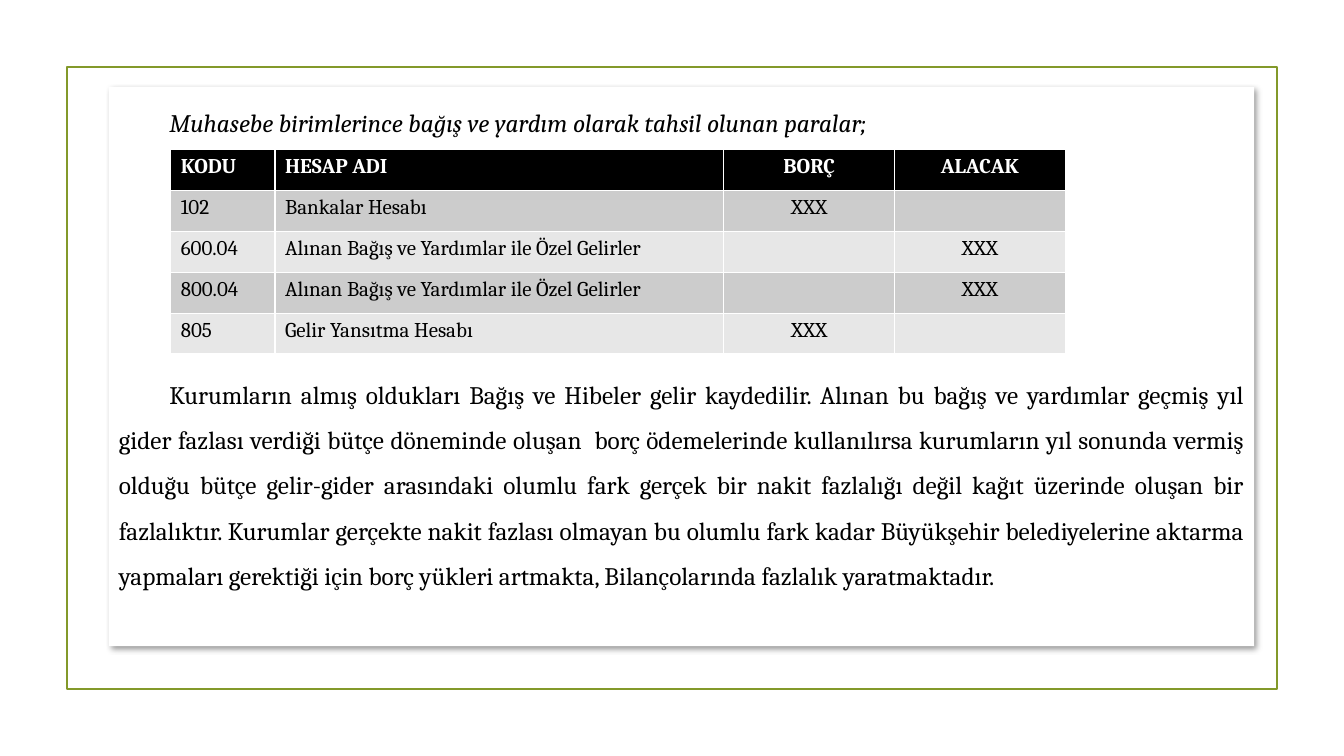
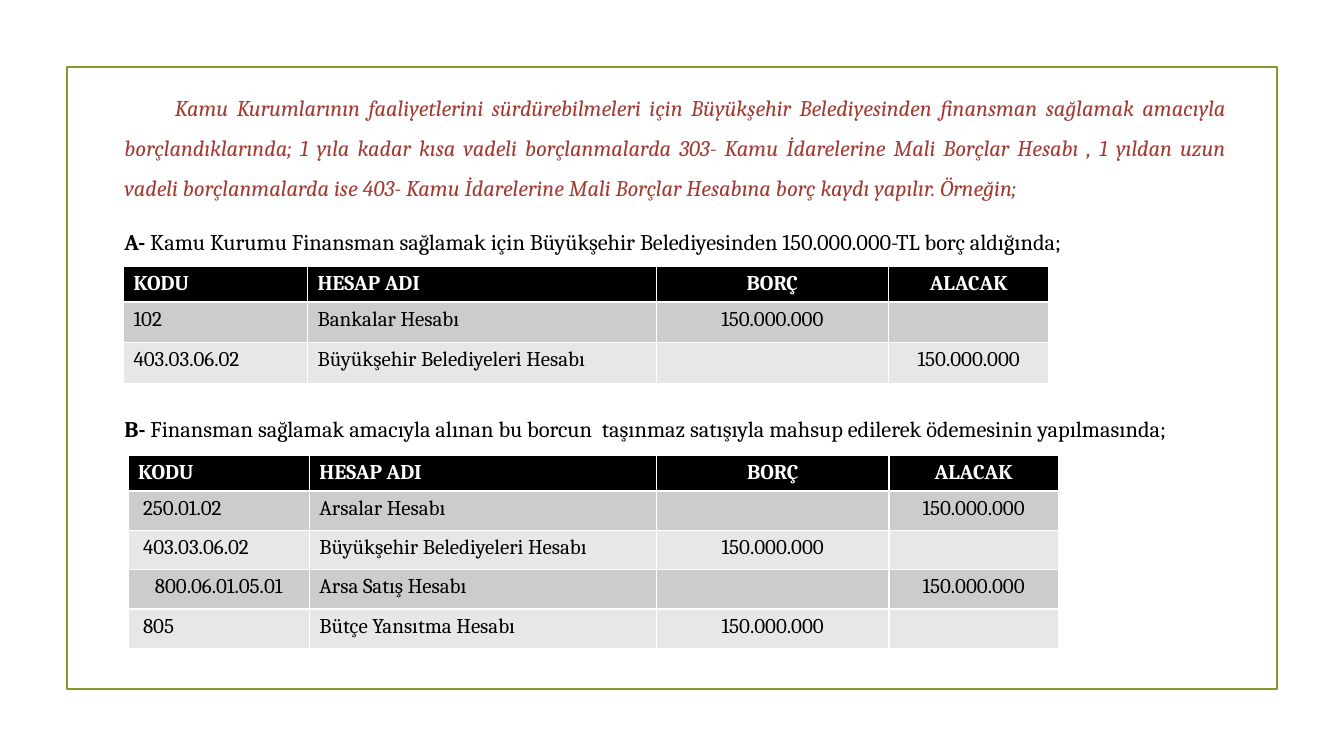
"""Build two slides on the accounting of donations and of borrowing."""
from dataclasses import dataclass

from lxml.etree import SubElement
from pptx import Presentation
from pptx.dml.color import RGBColor
from pptx.enum.shapes import MSO_SHAPE
from pptx.enum.text import MSO_ANCHOR, PP_ALIGN
from pptx.oxml.ns import qn
from pptx.util import Pt


@dataclass(frozen=True)
class Theme:
    font: str = "Cambria"
    ink: str = "000000"
    paper: str = "FFFFFF"
    frame: str = "83992A"
    accent: str = "A23C33"
    bands: tuple = ("CCCCCC", "E7E7E7")
    large: float = 18
    body: float = 16
    cell: float = 15
    first_line: float = 36


THEME = Theme()
SLIDE_SIZE = (960, 540)
FRAME = (48, 48, 864, 444)
HEADER = ("KODU", "HESAP ADI", "BORÇ", "ALACAK")
AMOUNT = "150.000.000"

SLIDES = [
    {
        "panel": (77.8, 62, 818, 399.6),
        "raised": True,
        "size": THEME.large,
        "paragraphs": [
            {"text": "Muhasebe birimlerince bağış ve yardım olarak tahsil olunan paralar;",
             "italic": True, "indent": True, "spacing": 1.5},
            {"text": "Kurumların almış oldukları Bağış ve Hibeler gelir kaydedilir. Alınan bu bağış ve "
                     "yardımlar geçmiş yıl gider fazlası verdiği bütçe döneminde oluşan  borç "
                     "ödemelerinde kullanılırsa kurumların yıl sonunda vermiş olduğu bütçe gelir-gider "
                     "arasındaki olumlu fark gerçek bir nakit fazlalığı değil kağıt üzerinde oluşan bir "
                     "fazlalıktır. Kurumlar gerçekte nakit fazlası olmayan bu olumlu fark kadar "
                     "Büyükşehir belediyelerine aktarma yapmaları gerektiği için borç yükleri artmakta, "
                     "Bilançolarında fazlalık yaratmaktadır.",
             "indent": True, "spacing": 1.5, "before": 162},
        ],
        "tables": [
            {"at": (122, 106.9), "columns": (74.5, 320.5, 122, 122), "header": 29.2, "row": 29.2,
             "rows": [("102", "Bankalar Hesabı", "XXX", ""),
                      ("600.04", "Alınan Bağış ve Yardımlar ile Özel Gelirler", "", "XXX"),
                      ("800.04", "Alınan Bağış ve Yardımlar ile Özel Gelirler", "", "XXX"),
                      ("805", "Gelir Yansıtma Hesabı", "XXX", "")]},
        ],
    },
    {
        "panel": (81.8, 54, 801.4, 424),
        "size": THEME.body,
        "paragraphs": [
            {"text": "Kamu Kurumlarının faaliyetlerini sürdürebilmeleri için Büyükşehir Belediyesinden "
                     "finansman sağlamak amacıyla borçlandıklarında; 1 yıla kadar kısa vadeli "
                     "borçlanmalarda 303- Kamu İdarelerine Mali Borçlar Hesabı , 1 yıldan uzun vadeli "
                     "borçlanmalarda ise 403- Kamu İdarelerine Mali Borçlar Hesabına borç kaydı yapılır. "
                     "Örneğin;",
             "italic": True, "indent": True, "spacing": 1.5, "color": THEME.accent},
            {"label": "A-", "before": 19,
             "text": " Kamu Kurumu Finansman sağlamak için Büyükşehir Belediyesinden "
                     "150.000.000-TL borç aldığında;"},
            {"label": "B-", "before": 114.5,
             "text": " Finansman sağlamak amacıyla alınan bu borcun  taşınmaz satışıyla mahsup "
                     "edilerek ödemesinin yapılmasında;"},
        ],
        "tables": [
            {"at": (88.2, 190.5), "columns": (131.5, 249, 166, 114.5), "header": 24.5, "row": 29.2,
             "rows": [("102", "Bankalar Hesabı", AMOUNT, ""),
                      ("403.03.06.02", "Büyükşehir Belediyeleri Hesabı", "", AMOUNT)]},
            {"at": (91.5, 325.5), "columns": (129.5, 248, 166, 121), "header": 24.5, "row": 28.1,
             "code_indent": 3.5, "centred_codes": ("800.06.01.05.01",),
             "rows": [("250.01.02", "Arsalar Hesabı", "", AMOUNT),
                      ("403.03.06.02", "Büyükşehir Belediyeleri Hesabı", AMOUNT, ""),
                      ("800.06.01.05.01", "Arsa Satış Hesabı", "", AMOUNT),
                      ("805", "Bütçe Yansıtma Hesabı", AMOUNT, "")]},
        ],
    },
]


def rgb(value):
    return RGBColor.from_string(value)


def style_run(run, size, color, bold=False, italic=False):
    run.font.name = THEME.font
    run.font.size = Pt(size)
    run.font.color.rgb = rgb(color)
    run.font.bold = bold
    run.font.italic = italic


def add_rectangle(slide, box):
    shape = slide.shapes.add_shape(MSO_SHAPE.RECTANGLE, *map(Pt, box))
    shape.shadow.inherit = False
    return shape


def add_frame(slide):
    frame = add_rectangle(slide, FRAME)
    frame.fill.background()
    frame.line.color.rgb = rgb(THEME.frame)
    frame.line.width = Pt(1.25)


def add_raised_panel(slide, box):
    panel = add_rectangle(slide, box)
    panel.fill.solid()
    panel.fill.fore_color.rgb = rgb(THEME.paper)
    panel.line.fill.background()
    effects = panel._element.spPr.find(qn("a:effectLst"))
    shadow = SubElement(effects, qn("a:outerShdw"), blurRad=str(Pt(4)), dist=str(Pt(3)),
                        dir="2700000", algn="tl", rotWithShape="0")
    color = SubElement(shadow, qn("a:srgbClr"), val=THEME.ink)
    SubElement(color, qn("a:alpha"), val="40000")
    return panel


def fill_text(shape, paragraphs, size):
    frame = shape.text_frame
    frame.word_wrap = True
    frame.vertical_anchor = MSO_ANCHOR.TOP
    for index, item in enumerate(paragraphs):
        paragraph = frame.add_paragraph() if index else frame.paragraphs[0]
        paragraph.alignment = PP_ALIGN.JUSTIFY
        paragraph.line_spacing = item.get("spacing", 1.0)
        if "before" in item:
            paragraph.space_before = Pt(item["before"])
        if item.get("indent"):
            paragraph._p.get_or_add_pPr().set("indent", str(Pt(THEME.first_line)))
        color = item.get("color", THEME.ink)
        if "label" in item:
            label = paragraph.add_run()
            label.text = item["label"]
            style_run(label, size, color, bold=True)
        run = paragraph.add_run()
        run.text = item["text"]
        style_run(run, size, color, italic=item.get("italic", False))


def add_accounts(slide, data):
    rows = [HEADER, *data["rows"]]
    heights = [data["header"]] + [data["row"]] * len(data["rows"])
    extent = (sum(data["columns"]), sum(heights))
    table = slide.shapes.add_table(len(rows), len(HEADER), *map(Pt, data["at"] + extent)).table
    for column, width in zip(table.columns, data["columns"]):
        column.width = Pt(width)
    for row_index, (values, height) in enumerate(zip(rows, heights)):
        table.rows[row_index].height = Pt(height)
        is_header = row_index == 0
        fill = THEME.ink if is_header else THEME.bands[(row_index - 1) % 2]
        for column_index, value in enumerate(values):
            cell = table.cell(row_index, column_index)
            cell.fill.solid()
            cell.fill.fore_color.rgb = rgb(fill)
            cell.text_frame.text = value
            paragraph = cell.text_frame.paragraphs[0]
            centred = column_index > 1 or value in data.get("centred_codes", ())
            paragraph.alignment = PP_ALIGN.CENTER if centred else PP_ALIGN.LEFT
            if column_index == 0 and not is_header and not centred:
                cell.margin_left = Pt(7.2 + data.get("code_indent", 0))
            for run in paragraph.runs:
                style_run(run, THEME.cell, THEME.paper if is_header else THEME.ink, bold=is_header)
            if not value:
                paragraph._p.get_or_add_endParaRPr().set("sz", str(THEME.cell * 100))


def main():
    presentation = Presentation()
    presentation.slide_width, presentation.slide_height = map(Pt, SLIDE_SIZE)
    for content in SLIDES:
        slide = presentation.slides.add_slide(presentation.slide_layouts[6])
        add_frame(slide)
        if content.get("raised"):
            panel = add_raised_panel(slide, content["panel"])
        else:
            panel = slide.shapes.add_textbox(*map(Pt, content["panel"]))
        fill_text(panel, content["paragraphs"], content["size"])
        for data in content["tables"]:
            add_accounts(slide, data)
    presentation.save("out.pptx")


if __name__ == "__main__":
    main()
